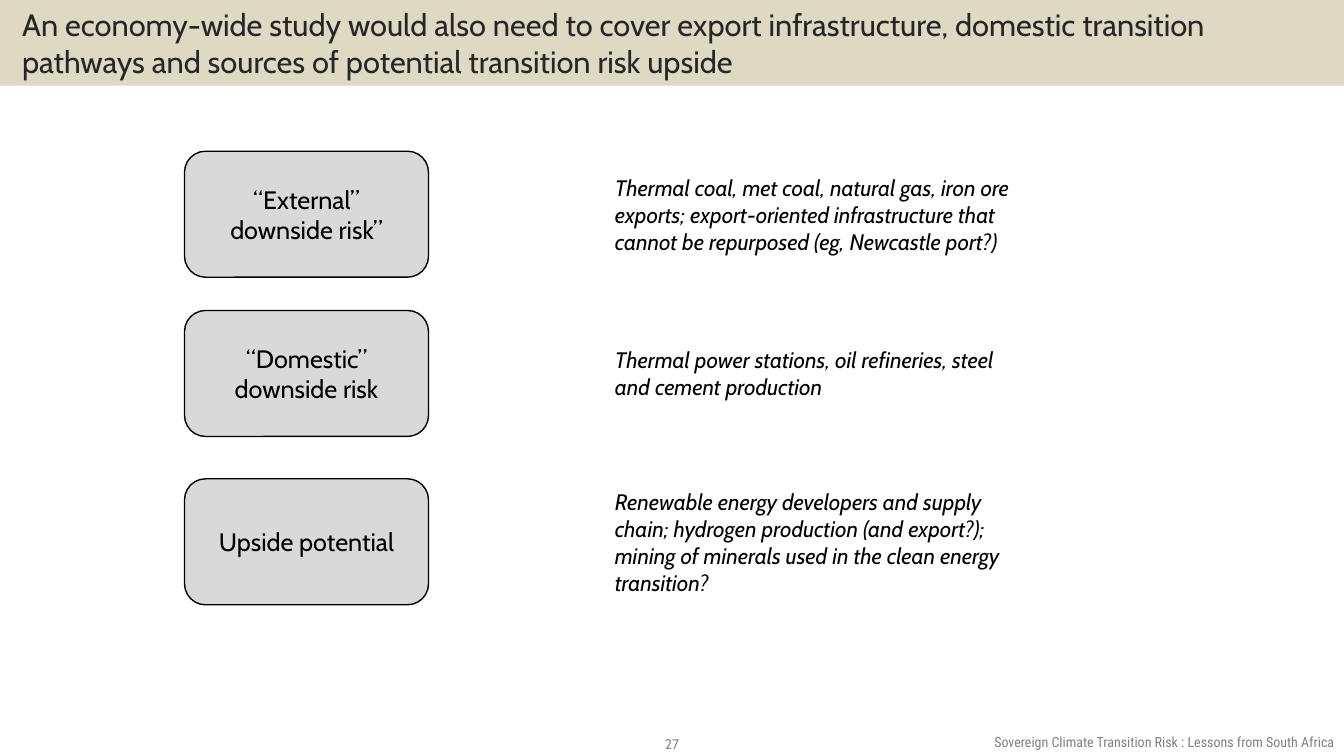
from pptx import Presentation
from pptx.dml.color import RGBColor
from pptx.enum import shapes, text
from pptx.util import Inches, Pt

TITLE = ("An economy-wide study would also need to cover export infrastructure, "
         "domestic transition pathways and sources of potential transition risk upside")
FOOTER = "Sovereign Climate Transition Risk : Lessons from South Africa"
PAGE_NUMBER = "27"
# top edge, category, examples
RISKS = [
    (1.5, "“External” downside risk”",
     "Thermal coal, met coal, natural gas, iron ore exports; export-oriented "
     "infrastructure that cannot be repurposed (eg, Newcastle port?)"),
    (3.08, "“Domestic” downside risk",
     "Thermal power stations, oil refineries, steel and cement production"),
    (4.75, "Upside potential",
     "Renewable energy developers and supply chain; hydrogen production (and export?); "
     "mining of minerals used in the clean energy transition?"),
]
COLORS = {"band": "DDD9C3", "title": "262626", "card": "D9D9D9", "ink": "000000",
          "footer": "808080", "number": "8C8C8C"}
ROW_HEIGHT = 1.25
LEFT, CENTER, RIGHT = text.PP_ALIGN.LEFT, text.PP_ALIGN.CENTER, text.PP_ALIGN.RIGHT
TOP, MIDDLE = text.MSO_ANCHOR.TOP, text.MSO_ANCHOR.MIDDLE


def color(name):
    return RGBColor.from_string(COLORS[name])


def write(box, words, size, ink="ink", align=LEFT, anchor=MIDDLE, font="Cabin", italic=False):
    frame = box.text_frame
    frame.word_wrap = True
    frame.vertical_anchor = anchor
    para = frame.paragraphs[0]
    para.text = words
    para.alignment = align
    para.font.name = font
    para.font.size = Pt(size)
    para.font.italic = italic
    para.font.color.rgb = color(ink)


def add_text(page, area, words, size, **style):
    box = page.shapes.add_textbox(*map(Inches, area))
    write(box, words, size, **style)


def add_filled(page, kind, area, fill, outline=None):
    shape = page.shapes.add_shape(kind, *map(Inches, area))
    shape.shadow.inherit = False
    shape.fill.solid()
    shape.fill.fore_color.rgb = color(fill)
    if outline:
        shape.line.color.rgb = color(outline)
        shape.line.width = Pt(1)
    else:
        shape.line.fill.background()
    return shape


def main():
    deck = Presentation()
    deck.slide_width, deck.slide_height = Inches(13.33), Inches(7.5)
    page = deck.slides.add_slide(deck.slide_layouts[6])

    band = add_filled(page, shapes.MSO_SHAPE.RECTANGLE, (0, 0, 13.33, 0.85), "band")
    write(band, TITLE, 22, ink="title")
    band.text_frame.margin_left = Inches(0.22)

    for top, category, examples in RISKS:
        card = add_filled(page, shapes.MSO_SHAPE.ROUNDED_RECTANGLE,
                          (1.83, top, 2.42, ROW_HEIGHT), "card", "ink")
        write(card, category, 18, align=CENTER)
        add_text(page, (6, top, 4.25, ROW_HEIGHT), examples, 16, italic=True)

    add_text(page, (5.11, 7.27, 3.11, 0.23), PAGE_NUMBER, 10, ink="number", align=CENTER)
    add_text(page, (8, 7.23, 5.33, 0.27), FOOTER, 10, ink="footer", align=RIGHT,
             anchor=TOP, font="Roboto Condensed")
    deck.save("out.pptx")


if __name__ == "__main__":
    main()
